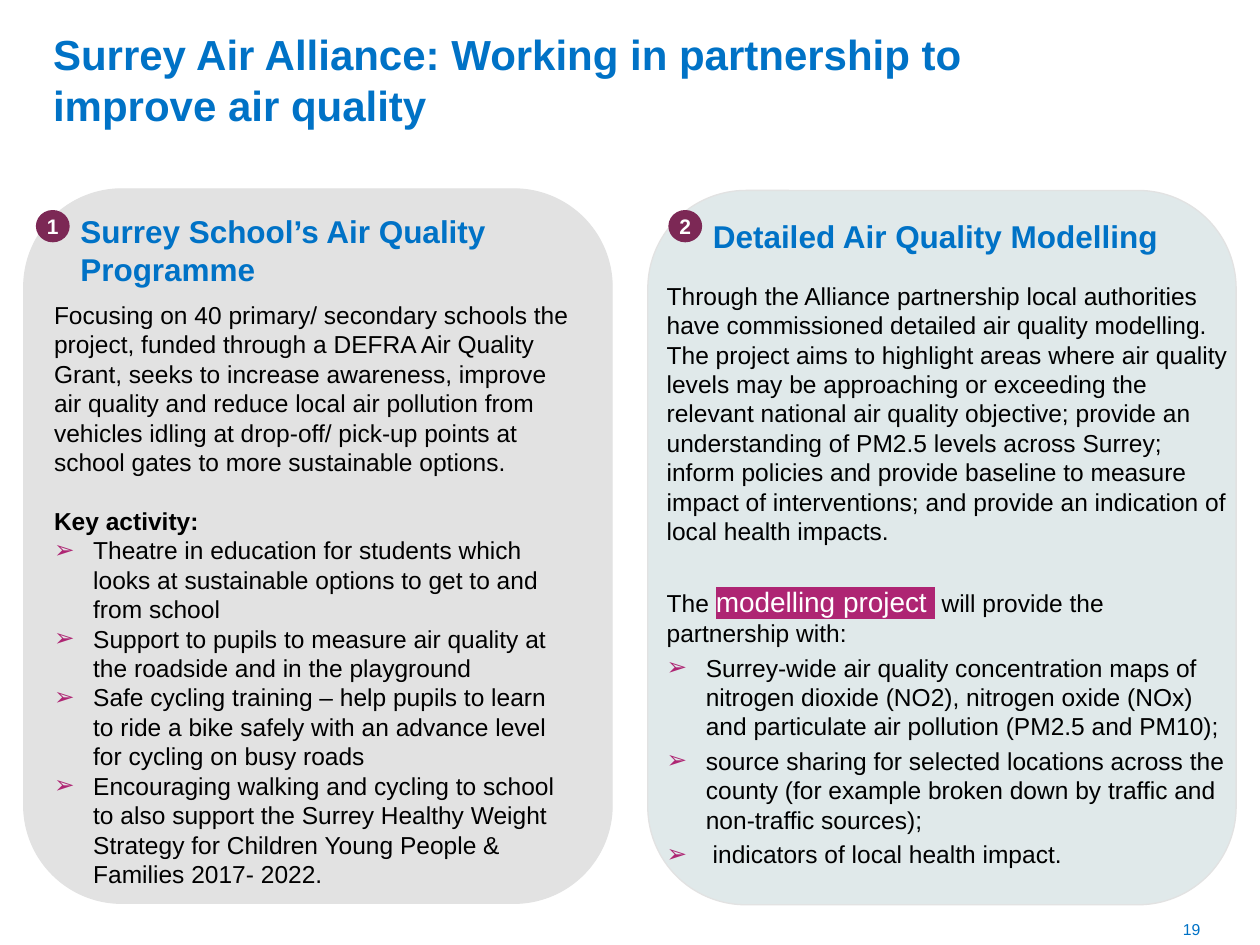
from lxml import etree
from pptx import Presentation
from pptx import util as u
from pptx.dml.color import RGBColor
from pptx.enum import shapes, text
from pptx.oxml import ns

BLUE = RGBColor(0x00, 0x72, 0xC6)
BLACK = RGBColor(0x00, 0x00, 0x00)
WHITE = RGBColor(0xFF, 0xFF, 0xFF)
GREY = RGBColor(0xE2, 0xE2, 0xE2)
PALE_TEAL = RGBColor(0xE0, 0xE9, 0xEA)
PLUM = RGBColor(0x7C, 0x28, 0x55)
MAGENTA = RGBColor(0xAE, 0x25, 0x73)
LEFT = text.PP_ALIGN.LEFT


def write(shape, lines, size, color, bold=False, align=LEFT, margins=(0.25, 0.13), wrap=True):
    frame = shape.text_frame
    frame.word_wrap = wrap
    frame.auto_size = text.MSO_AUTO_SIZE.NONE
    frame.margin_left = frame.margin_right = u.Cm(margins[0])
    frame.margin_top = frame.margin_bottom = u.Cm(margins[1])
    frame.text = "\n".join(lines)
    for para in frame.paragraphs:
        para.alignment = align
        for span in para.runs:
            span.font.name = "Arial"
            span.font.size = u.Pt(size)
            span.font.bold = bold
            span.font.color.rgb = color
    return frame


def add_bullet(para):
    properties = para._p.get_or_add_pPr()
    properties.set("marL", str(u.Cm(0.79)))
    properties.set("indent", str(-u.Cm(0.79)))
    bullet_color = etree.SubElement(properties, ns.qn("a:buClr"))
    etree.SubElement(bullet_color, ns.qn("a:srgbClr")).set("val", str(MAGENTA))
    etree.SubElement(properties, ns.qn("a:buFont")).set("typeface", "Arial")
    etree.SubElement(properties, ns.qn("a:buChar")).set("char", "➢")


deck = Presentation()
deck.slide_width = u.Cm(25.4)
deck.slide_height = u.Cm(19.05)
page = deck.slides.add_slide(deck.slide_layouts[5])

title = page.shapes.title
title.left, title.top, title.width, title.height = u.Cm(1.07), u.Cm(0.89), u.Cm(20.45), u.Cm(1.85)
write(title, ["Surrey Air Alliance: Working in partnership to improve air quality"],
      24, BLUE, bold=True, margins=(0, 0.13))
title.text_frame.vertical_anchor = text.MSO_ANCHOR.BOTTOM

for left, top, fill in [(13.06, 3.84, PALE_TEAL), (0.48, 3.81, GREY)]:
    panel = page.shapes.add_shape(shapes.MSO_SHAPE.ROUNDED_RECTANGLE,
                                  u.Cm(left), u.Cm(top), u.Cm(11.86), u.Cm(14.4))
    panel.shadow.inherit = False
    panel.fill.solid()
    panel.fill.fore_color.rgb = fill
    panel.line.color.rgb = GREY
    panel.line.width = u.Pt(0.75)

headings = [
    ("1", 0.76, "Surrey School’s Air Quality Programme", 4.14, 10.36, True),
    ("2", 13.51, "Detailed Air Quality Modelling", 4.24, 9.75, False),
]
for number, left, heading, top, width, wrap in headings:
    box = page.shapes.add_textbox(u.Cm(left + 0.61), u.Cm(top), u.Cm(width), u.Cm(1.02))
    write(box, [heading], 18, BLUE, bold=True, wrap=wrap)
    badge = page.shapes.add_shape(shapes.MSO_SHAPE.OVAL, u.Cm(left), u.Cm(4.27), u.Cm(0.61), u.Cm(0.58))
    badge.shadow.inherit = False
    badge.fill.solid()
    badge.fill.fore_color.rgb = PLUM
    badge.line.color.rgb = PLUM
    badge.line.width = u.Pt(2)
    write(badge, [number], 12, WHITE, bold=True, align=text.PP_ALIGN.CENTER, wrap=False)
    badge.text_frame.vertical_anchor = text.MSO_ANCHOR.MIDDLE

schools_lines = [
    "Focusing on 40 primary/ secondary schools the project, funded through a DEFRA Air Quality Grant, "
    "seeks to increase awareness, improve air quality and reduce local air pollution from vehicles idling "
    "at drop-off/ pick-up points at school gates to more sustainable options.",
    "Key activity:",
    "Theatre in education for students which looks at sustainable options to get to and from school",
    "Support to pupils to measure air quality at the roadside and in the playground",
    "Safe cycling training – help pupils to learn to ride a bike safely with an advance level for cycling "
    "on busy roads",
    "Encouraging walking and cycling to school to also support the Surrey Healthy Weight Strategy for "
    "Children Young People & Families 2017- 2022.",
]
schools_box = page.shapes.add_textbox(u.Cm(0.84), u.Cm(5.92), u.Cm(10.97), u.Cm(10.8))
schools = write(schools_box, schools_lines, 14, BLACK).paragraphs
schools[1].space_before = u.Pt(16.8)
schools[1].runs[0].font.bold = True
for para in schools[2:]:
    add_bullet(para)

modelling_lines = [
    "Through the Alliance partnership local authorities have commissioned detailed air quality modelling. "
    "The project aims to highlight areas where air quality levels may be approaching or exceeding the "
    "relevant national air quality objective; provide an understanding of PM2.5 levels across Surrey; "
    "inform policies and provide baseline to measure impact of interventions; and provide an indication "
    "of local health impacts.",
    "The ",
    "Surrey-wide air quality concentration maps of nitrogen dioxide (NO2), nitrogen oxide (NOx) and "
    "particulate air pollution (PM2.5 and PM10);",
    "source sharing for selected locations across the county (for example broken down by traffic and "
    "non-traffic sources);",
    " indicators of local health impact.",
]
modelling_box = page.shapes.add_textbox(u.Cm(13.44), u.Cm(5.66), u.Cm(11.33), u.Cm(12.12))
modelling = write(modelling_box, modelling_lines, 14, BLACK, margins=(0, 0)).paragraphs
modelling[1].space_before = u.Pt(22.4)
for wording, size, color in [("modelling project ", 16, WHITE),
                             (" will provide the partnership with:", 14, BLACK)]:
    span = modelling[1].add_run()
    span.text = wording
    span.font.size = u.Pt(size)
    span.font.color.rgb = color
    span.font.name = "Arial"
highlighted = modelling[1].runs[1].font._element
highlight = etree.Element(ns.qn("a:highlight"))
etree.SubElement(highlight, ns.qn("a:srgbClr")).set("val", str(MAGENTA))
highlighted.find(ns.qn("a:solidFill")).addnext(highlight)
for para in modelling[2:]:
    add_bullet(para)
    para.space_before = u.Pt(2.8)

number_box = page.shapes.add_textbox(u.Cm(23.72), u.Cm(18.54), u.Cm(0.48), u.Cm(0.36))
write(number_box, ["19"], 9, BLUE, align=text.PP_ALIGN.RIGHT, margins=(0, 0), wrap=False)

deck.save("out.pptx")
